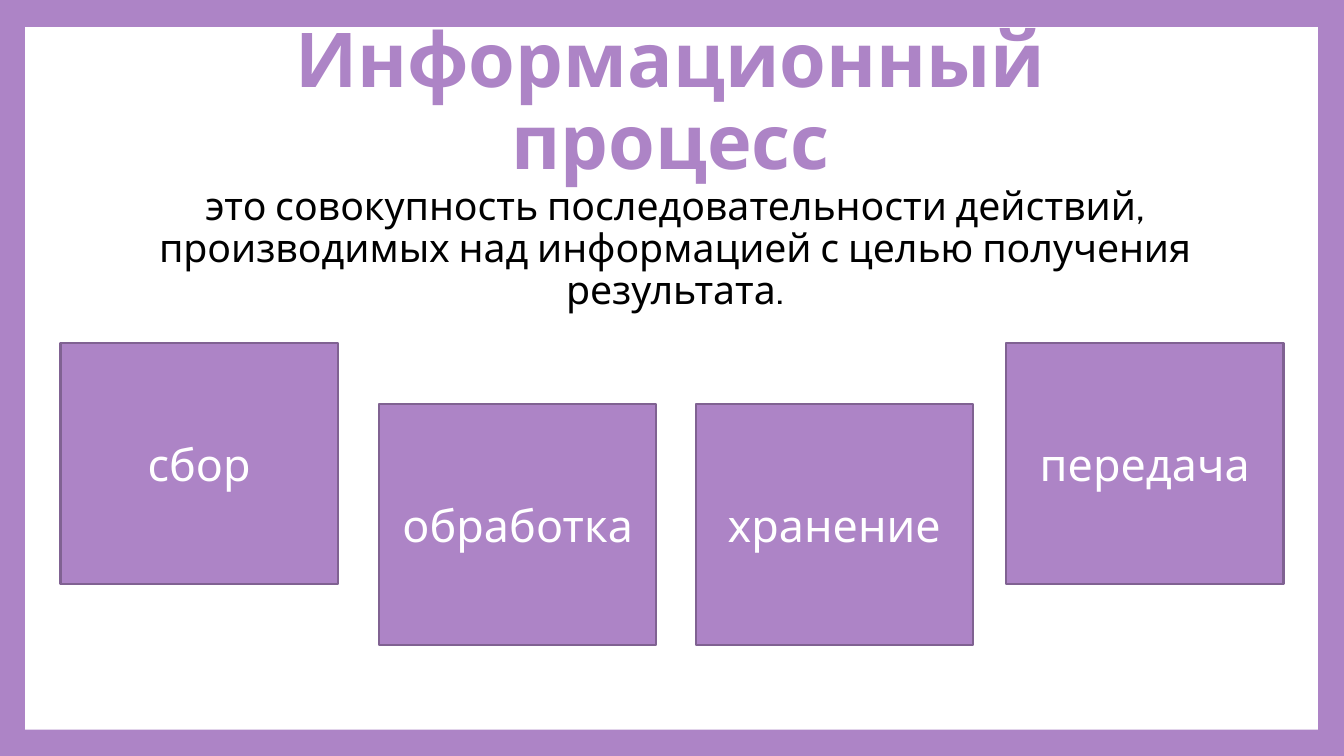
from pptx import Presentation
from pptx.dml.color import RGBColor
from pptx.enum.shapes import MSO_SHAPE as Shape
from pptx.enum.text import MSO_ANCHOR as Anchor, PP_ALIGN as Align
from pptx.util import Inches, Pt

COLORS = {
    "lilac": "AD84C6",
    "outline": "806292",
    "white": "FFFFFF",
    "black": "000000",
}
FONT = "Cabin"
STAGE_SIZE = (2.75, 2.39)
OUTER_TOP, INNER_TOP = 3.4, 4.01
STAGES = [
    ("сбор", 0.6, OUTER_TOP),
    ("обработка", 3.76, INNER_TOP),
    ("хранение", 6.9, INNER_TOP),
    ("передача", 9.98, OUTER_TOP),
]


def color(name):
    return RGBColor.from_string(COLORS[name])


def write(frame, text, size, color_name, anchor, bold=False):
    """Fill a text frame with one centred paragraph and return it."""
    frame.word_wrap = True
    frame.vertical_anchor = anchor
    paragraph = frame.paragraphs[0]
    paragraph.text = text
    paragraph.alignment = Align.CENTER
    font = paragraph.runs[0].font
    font.name, font.size, font.bold = FONT, Pt(size), bold
    font.color.rgb = color(color_name)
    return paragraph


def add_panel(slide, box, fill):
    panel = slide.shapes.add_shape(Shape.RECTANGLE, *map(Inches, box))
    panel.shadow.inherit = False
    panel.fill.solid()
    panel.fill.fore_color.rgb = color(fill)
    panel.line.fill.background()
    return panel


def add_frame(slide, box):
    """Lilac background with a white sheet on it."""
    slide.background.fill.solid()
    slide.background.fill.fore_color.rgb = color("lilac")
    add_panel(slide, box, "white")


def add_heading(slide, box):
    heading = slide.shapes.add_textbox(*map(Inches, box))
    paragraph = write(heading.text_frame, "Информационный процесс", 54,
                      "lilac", Anchor.MIDDLE, bold=True)
    paragraph.line_spacing = 0.9


def add_definition(slide, box):
    definition = slide.shapes.add_textbox(*map(Inches, box))
    paragraph = write(
        definition.text_frame,
        "это совокупность последовательности действий, производимых "
        "над информацией с целью получения результата.",
        28, "black", Anchor.TOP)
    paragraph.line_spacing = 0.9
    paragraph.space_before = Pt(14)
    paragraph._p.get_or_add_pPr().set("marL", str(Inches(0.05)))


def add_stage(slide, box, label):
    stage = add_panel(slide, box, "lilac")
    stage.line.color.rgb = color("outline")
    stage.line.width = Pt(1.5)
    write(stage.text_frame, label, 32, "white", Anchor.MIDDLE)


def main():
    deck = Presentation()
    deck.slide_width, deck.slide_height = Inches(13.33), Inches(7.5)
    slide = deck.slides.add_slide(deck.slide_layouts[6])
    add_frame(slide, (0.25, 0.27, 12.82, 6.97))
    add_heading(slide, (1.25, 0.29, 10.8, 1.48))
    add_definition(slide, (1.27, 1.8, 10.8, 4.42))
    for label, left, top in STAGES:
        add_stage(slide, (left, top, *STAGE_SIZE), label)
    deck.save("out.pptx")


if __name__ == "__main__":
    main()
